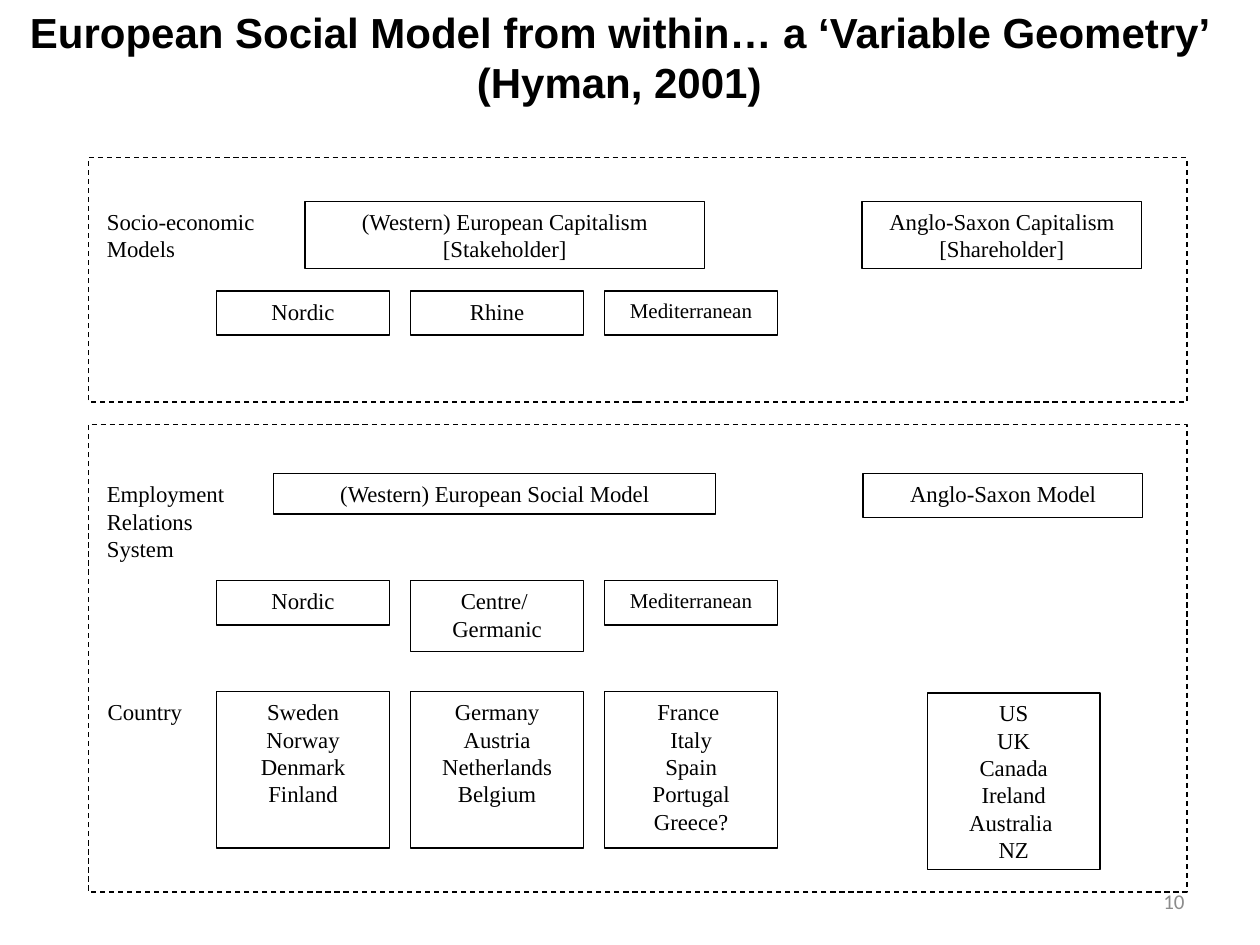
from pptx import Presentation
from pptx.dml.color import RGBColor
from pptx.enum.dml import MSO_LINE
from pptx.enum.shapes import MSO_SHAPE
from pptx.enum.text import MSO_ANCHOR, MSO_AUTO_SIZE, PP_ALIGN
from pptx.util import Emu, Pt

EMU_PER_PX = 9144


def px(length):
    """Turn px, at 100 to the inch, into EMU."""
    return Emu(length * EMU_PER_PX)


def color(code):
    """Turn a hex string into a colour."""
    return RGBColor.from_string(code)


class Diagram:
    """Hold the style and the current slide."""

    serif = "Times New Roman"
    ink = "000000"
    line_width = Pt(0.75)

    def __init__(self, slide):
        """Start drawing on a slide."""
        self.slide = slide

    def set_text(self, shape, text, size=13, font=serif, code=ink,
                 align=PP_ALIGN.CENTER, anchor=MSO_ANCHOR.TOP, bold=False):
        """Fill a shape with formatted text, one paragraph a line."""
        frame = shape.text_frame
        frame.text = text
        frame.word_wrap = True
        frame.auto_size = MSO_AUTO_SIZE.NONE
        frame.vertical_anchor = anchor
        for para in frame.paragraphs:
            para.alignment = align
            for span in para.runs:
                span.font.name = font
                span.font.size = Pt(size)
                span.font.bold = bold
                span.font.color.rgb = color(code)

    def title(self, text, left, top, width, height):
        """Move and fill the title placeholder."""
        title = self.slide.shapes.title
        title.left, title.top = px(left), px(top)
        title.width, title.height = px(width), px(height)
        self.set_text(title, text, size=24, font="Arial", bold=True)

    def outline(self, left, top, width, height):
        """Add an unfilled rectangle with a thin line."""
        box = self.slide.shapes.add_shape(
            MSO_SHAPE.RECTANGLE, px(left), px(top), px(width), px(height))
        box.shadow.inherit = False
        box.fill.background()
        box.line.color.rgb = color(self.ink)
        box.line.width = self.line_width
        return box

    def frame(self, left, top, width, height):
        """Add a dashed frame around a section."""
        self.outline(left, top, width, height).line.dash_style = MSO_LINE.DASH

    def box(self, text, left, top, width, height, size=13):
        """Add an outlined box with centred text."""
        self.set_text(self.outline(left, top, width, height), text, size)

    def label(self, text, left, top, width, height, **style):
        """Add a plain text label."""
        label = self.slide.shapes.add_textbox(
            px(left), px(top), px(width), px(height))
        self.set_text(label, text, **style)


def main():
    """Build the deck."""
    deck = Presentation()
    deck.slide_width, deck.slide_height = px(1000), px(750)
    diagram = Diagram(deck.slides.add_slide(deck.slide_layouts[5]))

    diagram.title("European Social Model from within… a ‘Variable Geometry’ "
                  "(Hyman, 2001)", 0, 0, 983, 125)

    for top, height in ((125, 194), (337, 371)):
        diagram.frame(70, top, 872, height)

    diagram.label("Socio-economic Models", 75, 160, 182, 53,
                  align=PP_ALIGN.LEFT)
    diagram.label("Employment Relations\nSystem", 75, 376, 125, 69,
                  align=PP_ALIGN.LEFT)
    diagram.label("Country", 58, 549, 114, 35)

    diagram.box("(Western) European Capitalism\n[Stakeholder]",
                242, 160, 317, 53)
    diagram.box("Anglo-Saxon Capitalism\n[Shareholder]", 684, 160, 222, 53)
    diagram.box("(Western) European Social Model", 217, 376, 351, 32)
    diagram.box("Anglo-Saxon Model", 685, 376, 222, 35)

    column_left, column_step, column_width = 172, 154, 137
    rows = (
        (231, (("Nordic", 35, 13), ("Rhine", 35, 13),
               ("Mediterranean", 35, 12))),
        (461, (("Nordic", 35, 13), ("Centre/ \nGermanic", 56, 13),
               ("Mediterranean", 35, 12))),
        (549, (("Sweden\nNorway\nDenmark\nFinland", 124, 13),
               ("Germany Austria\nNetherlands\nBelgium", 124, 13),
               ("France \nItaly\nSpain\nPortugal\nGreece?", 124, 13))),
    )
    for top, cells in rows:
        for column, (text, height, size) in enumerate(cells):
            diagram.box(text, column_left + column * column_step, top,
                        column_width, height, size)
    diagram.box("US\nUK\nCanada\nIreland\nAustralia \nNZ",
                736, 550, column_width, 140)

    diagram.label("10", 717, 695, 233, 40, size=12, font="Calibri",
                  code="8C8C8C", align=PP_ALIGN.RIGHT,
                  anchor=MSO_ANCHOR.MIDDLE)
    deck.save("out.pptx")


if __name__ == "__main__":
    main()
